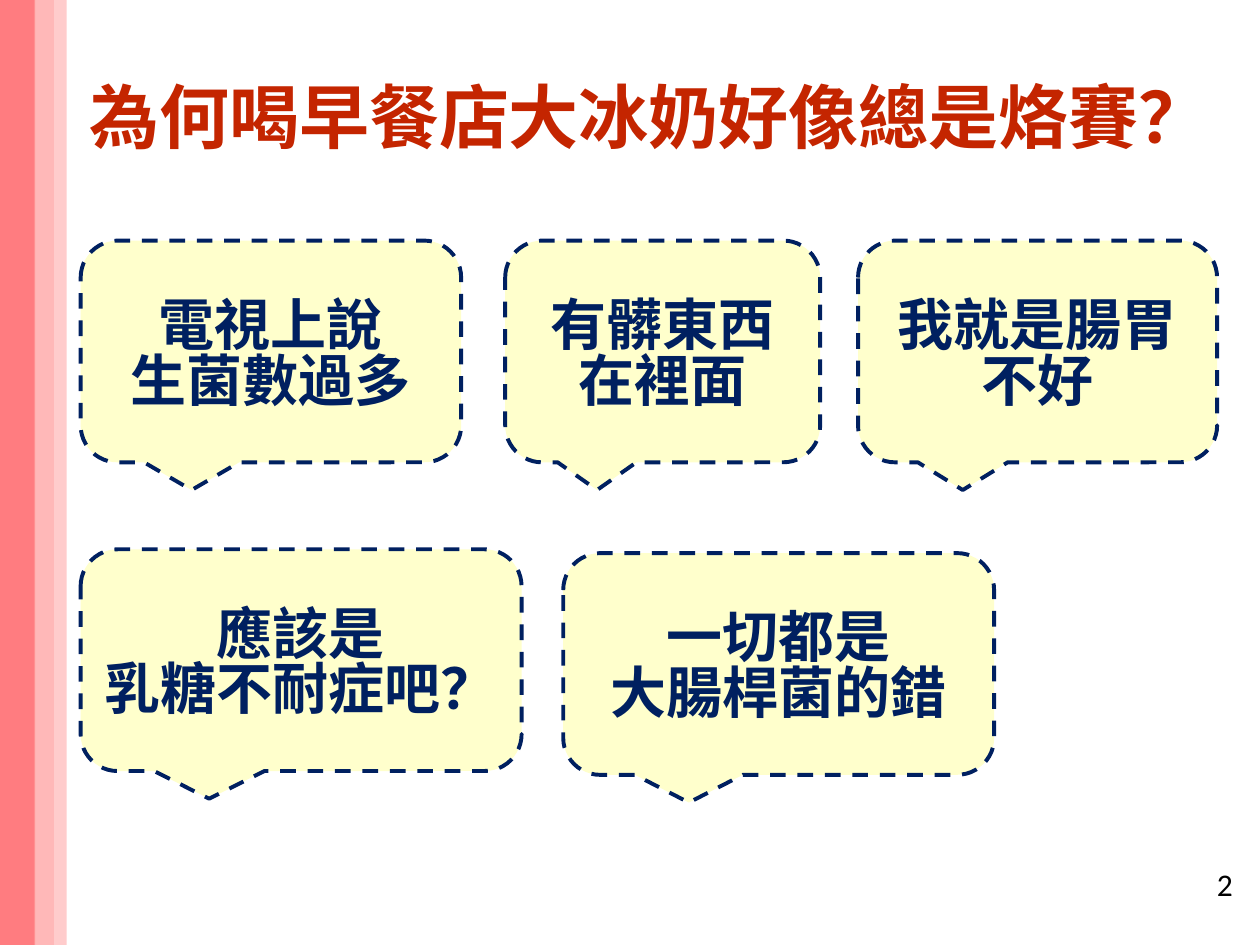
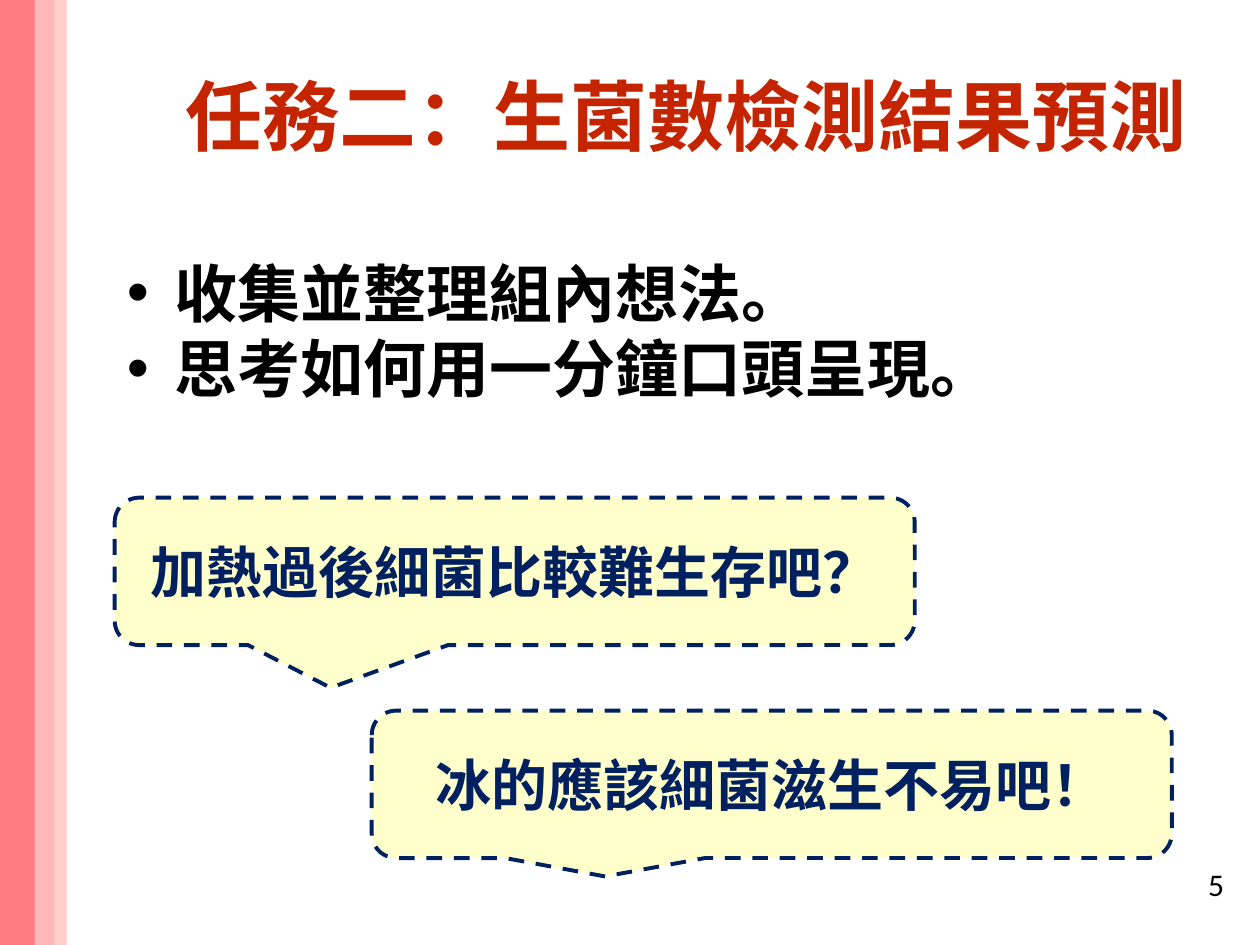
"""Build two slides on why breakfast-shop milk tea upsets stomachs."""
import lxml.etree
import pptx
import pptx.dml.color
import pptx.enum.dml
import pptx.enum.shapes
import pptx.enum.text
import pptx.oxml.ns
import pptx.util

Inches = pptx.util.Inches
Pt = pptx.util.Pt
ALIGN = pptx.enum.text.PP_ALIGN
ANCHOR = pptx.enum.text.MSO_ANCHOR
SHAPE = pptx.enum.shapes.MSO_SHAPE

COLORS = {
    "band_dark": "FF7C80",
    "band_middle": "FF9999",
    "band_light": "FFCCCC",
    "title": "C42500",
    "body": "000000",
    "callout_fill": "FFFFCC",
    "callout_ink": "002060",
}
HEADING_FONT = "Noto Sans CJK SC"
CALLOUT_FONT = "Noto Sans CJK JP"
NUMBER_FONT = "Calibri"
CJK_LINE_SPACING = 0.83
BANDS = [
    (0, 0.28, "band_dark", 100),
    (0.27, 0.16, "band_middle", 69),
    (0.43, 0.1, "band_light", 100),
]


def color(name):
    """Return the named palette colour."""
    return pptx.dml.color.RGBColor.from_string(COLORS[name])


def add_xml(parent, tag, **attributes):
    """Append a drawing element with attributes to its parent."""
    return lxml.etree.SubElement(parent, pptx.oxml.ns.qn(tag), attributes)


def write_text(shape, text, size, font_name, color_name, align=ALIGN.CENTER,
               anchor=ANCHOR.MIDDLE, bold=True, margin_top=0.05):
    """Write text into a shape and format every paragraph and run."""
    frame = shape.text_frame
    frame.text = text
    frame.word_wrap = True
    frame.vertical_anchor = anchor
    frame.margin_top = Inches(margin_top)
    for paragraph in frame.paragraphs:
        paragraph.alignment = align
        if font_name != NUMBER_FONT:
            paragraph.line_spacing = CJK_LINE_SPACING
        for run in paragraph.runs:
            run.font.size = Pt(size)
            run.font.bold = bold
            run.font.color.rgb = color(color_name)
            run.font.name = font_name
            add_xml(run.font._element, "a:ea", typeface=font_name)


def add_text(slide, box, text, *style, **options):
    """Add a text box and return its text frame."""
    shape = slide.shapes.add_textbox(*map(Inches, box))
    write_text(shape, text, *style, **options)
    return shape.text_frame


def add_bands(slide, height):
    """Draw the stripes along the left edge."""
    for left, width, color_name, opacity in BANDS:
        band = slide.shapes.add_shape(
            SHAPE.RECTANGLE, Inches(left), 0, Inches(width), height)
        band.shadow.inherit = False
        band.fill.solid()
        band.fill.fore_color.rgb = color(color_name)
        band.line.fill.background()
        if opacity < 100:
            fill = band._element.spPr.find(".//" + pptx.oxml.ns.qn("a:srgbClr"))
            add_xml(fill, "a:alpha", val=str(opacity * 1000))


def add_title(slide, box, text, size):
    """Add the slide title, centred in its box."""
    add_text(slide, box, text, size, HEADING_FONT, "title", margin_top=0.15)


def add_page_number(slide, left, number):
    """Add the page number at the lower right."""
    add_text(slide, (left, 6.82, 0.44, 0.4), str(number), 18, NUMBER_FONT, "body",
             align=ALIGN.LEFT, anchor=ANCHOR.TOP, bold=False)


def add_callout(slide, box, text, tip=None):
    """Add a dashed speech bubble, with an optional tip position."""
    callout = slide.shapes.add_shape(
        SHAPE.ROUNDED_RECTANGULAR_CALLOUT, *map(Inches, box))
    callout.shadow.inherit = False
    callout.fill.solid()
    callout.fill.fore_color.rgb = color("callout_fill")
    callout.line.color.rgb = color("callout_ink")
    callout.line.width = Pt(2.25)
    callout.line.dash_style = pptx.enum.dml.MSO_LINE.DASH
    if tip:
        callout.adjustments[0], callout.adjustments[1] = tip
    write_text(callout, text, 32, CALLOUT_FONT, "callout_ink", margin_top=0.13)


def add_bullets(slide, box, items):
    """Add a bulleted list with hanging indents."""
    frame = add_text(slide, box, "\n".join(items), 36, HEADING_FONT, "body",
                     align=ALIGN.LEFT, anchor=ANCHOR.TOP, margin_top=0.1)
    indent = Inches(0.38)
    for index, paragraph in enumerate(frame.paragraphs):
        if index:
            paragraph.space_before = Pt(7.2)
        properties = paragraph._p.get_or_add_pPr()
        properties.set("marL", str(indent))
        properties.set("indent", str(-indent))
        add_xml(properties, "a:buFont", typeface="Arial")
        add_xml(properties, "a:buChar", char="•")


def add_slide(presentation):
    """Add a blank slide with the shared stripes."""
    slide = presentation.slides.add_slide(presentation.slide_layouts[6])
    add_bands(slide, presentation.slide_height)
    return slide


def build_opinions_slide(presentation):
    """Build the slide of guesses about the cause."""
    slide = add_slide(presentation)
    add_title(slide, (0.5, 0.3, 9.3, 1.25), "為何喝早餐店大冰奶好像總是烙賽？", 40)
    add_page_number(slide, 9.56, 2)
    opinions = [
        (0.64, 1.91, 3.02, "電視上說\n生菌數過多"),
        (4.01, 1.91, 2.5, "有髒東西在裡面"),
        (6.81, 1.91, 2.85, "我就是腸胃不好"),
        (0.64, 4.36, 3.5, "應該是\n乳糖不耐症吧？"),
        (4.47, 4.39, 3.42, "一切都是\n大腸桿菌的錯"),
    ]
    for left, top, width, text in opinions:
        add_callout(slide, (left, top, width, 1.76), text)


def build_prediction_slide(presentation):
    """Build the slide of the prediction task."""
    slide = add_slide(presentation)
    add_title(slide, (1.15, 0.5, 8.59, 0.84), "任務二：生菌數檢測結果預測", 44)
    add_bullets(slide, (0.91, 2.02, 8.84, 1.7),
                ["收集並整理組內想法。", "思考如何用一分鐘口頭呈現。"])
    add_page_number(slide, 9.49, 5)
    add_callout(slide, (0.91, 3.95, 6.35, 1.17), "加熱過後細菌比較難生存吧？",
                tip=(-0.23, 0.79))
    add_callout(slide, (2.95, 5.64, 6.35, 1.17), "冰的應該細菌滋生不易吧！")


def main():
    """Create the presentation and save it."""
    presentation = pptx.Presentation()
    presentation.slide_width = Inches(10)
    presentation.slide_height = Inches(7.5)
    build_opinions_slide(presentation)
    build_prediction_slide(presentation)
    presentation.save("out.pptx")


if __name__ == "__main__":
    main()
